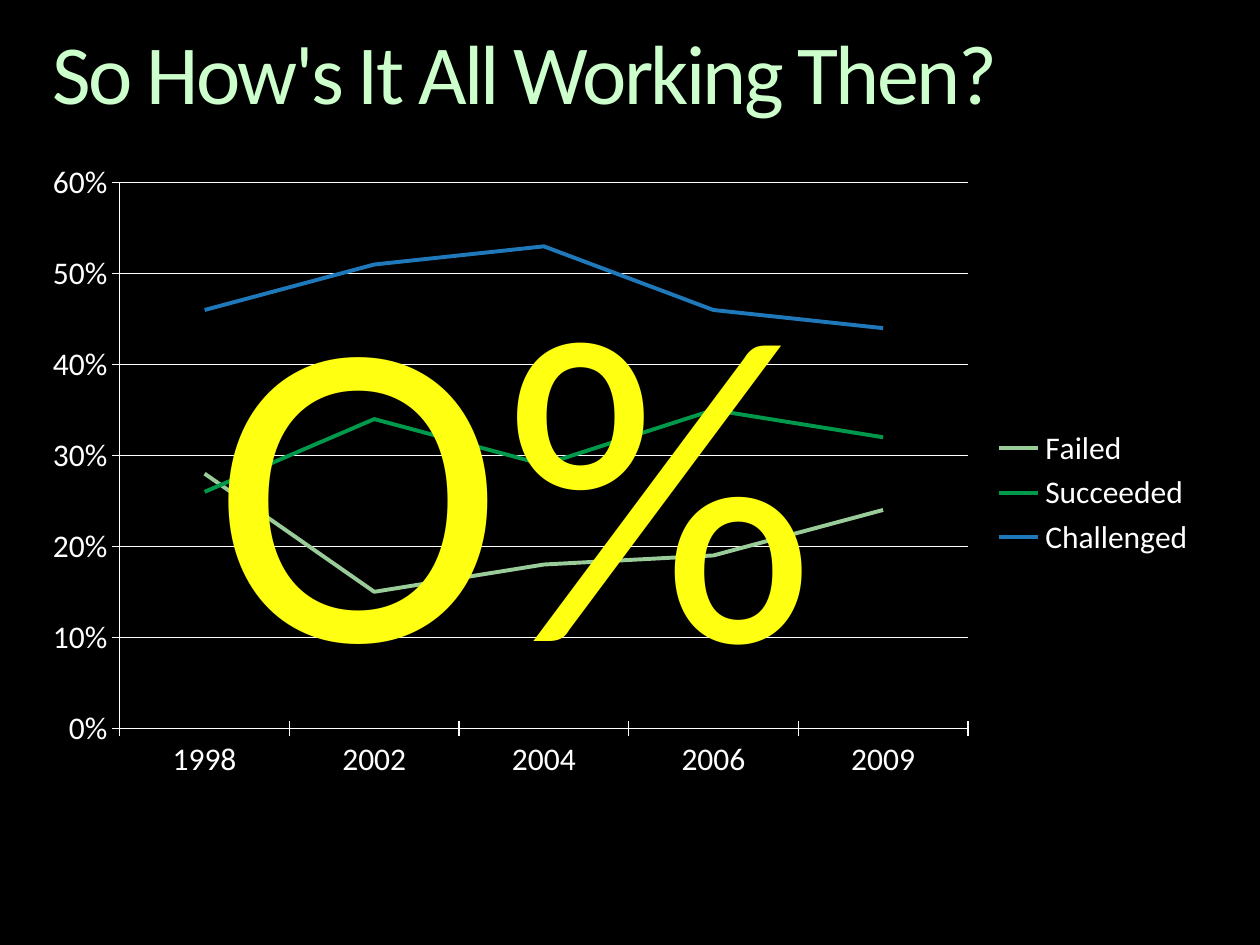
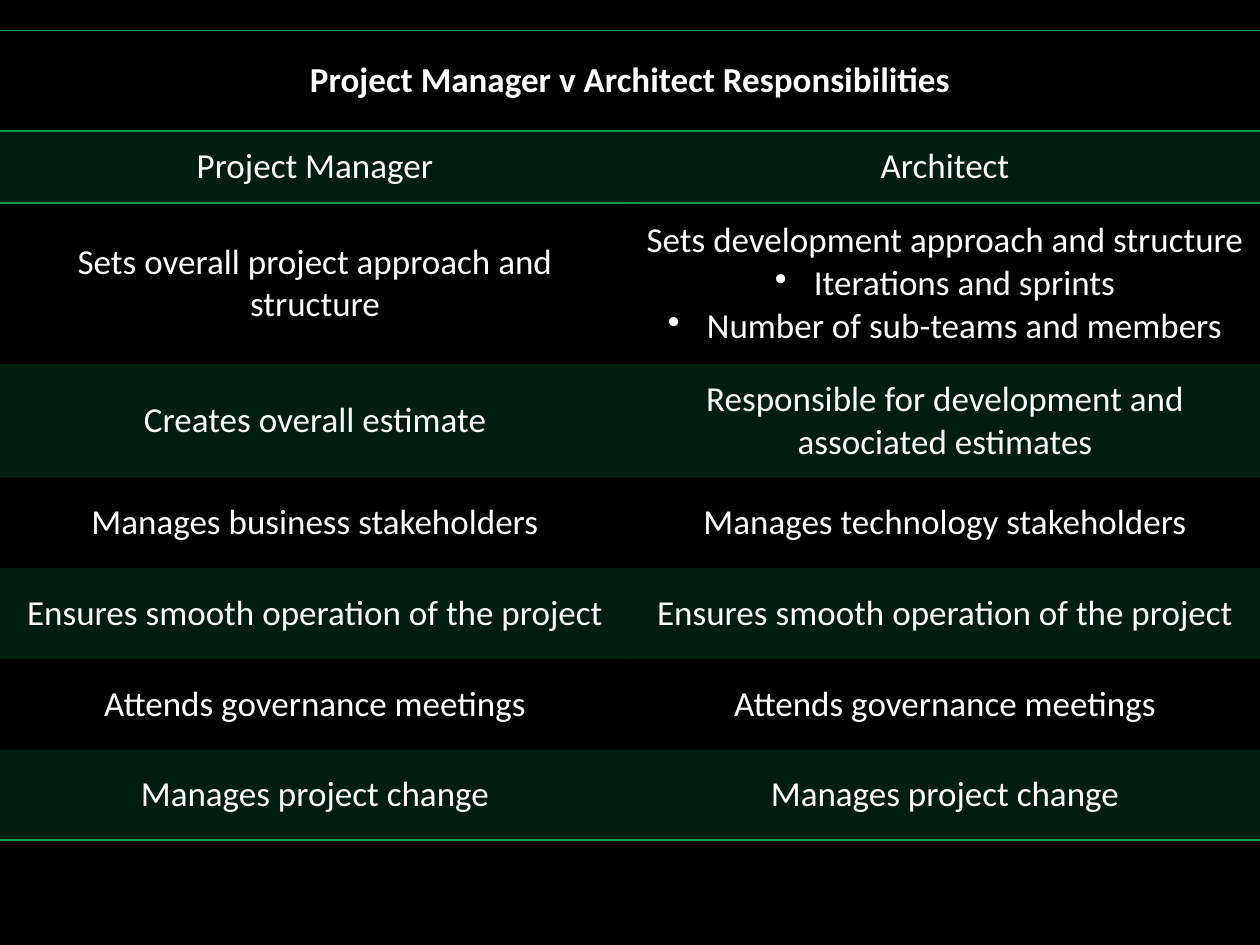
from pptx import Presentation
from pptx.chart.data import CategoryChartData
from pptx.dml.color import RGBColor
from pptx.enum.chart import XL_CHART_TYPE, XL_LEGEND_POSITION, XL_TICK_MARK
from pptx.enum.text import MSO_ANCHOR, PP_ALIGN
from pptx.oxml import parse_xml
from pptx.oxml.ns import nsdecls
from pptx.oxml.xmlchemy import OxmlElement
from pptx.util import Emu, Inches, Pt

LINE, LEGEND_RIGHT = XL_CHART_TYPE.LINE, XL_LEGEND_POSITION.RIGHT
CROSS = XL_TICK_MARK.CROSS
TOP, MIDDLE = MSO_ANCHOR.TOP, MSO_ANCHOR.MIDDLE
LEFT, CENTER = PP_ALIGN.LEFT, PP_ALIGN.CENTER
TITLE_ONLY, BLANK = 5, 6

FONT = "Calibri"
C = {"back": "000000", "title": "CCFFCC", "text": "FFFFFF", "shout": "FFFF11",
     "green": "00994B", "pale": "99CC99", "blue": "1E78B9"}
PLAIN_TABLE = "{2D5ABB26-0587-4C30-8999-92F81FD0307C}"
MARGIN, CONTENT_W = Inches(0.42), Inches(9.17)
BAND_OPACITY = 20

YEARS = ["1998", "2002", "2004", "2006", "2009"]
OUTCOMES = [
    ("Failed", "pale", [0.28, 0.15, 0.18, 0.19, 0.24]),
    ("Succeeded", "green", [0.26, 0.34, 0.29, 0.35, 0.32]),
    ("Challenged", "blue", [0.46, 0.51, 0.53, 0.46, 0.44]),
]
PLOT_AREA = {"x": 0, "y": 0.032, "w": 0.792, "h": 0.875}

HEADING = "Project Manager v Architect Responsibilities"
# Row height in inches, then the lines of each cell; lines after the first are bullets
DUTIES = [
    (0.57, ["Project Manager"], ["Architect"]),
    (1.28, ["Sets overall project approach and structure"],
     ["Sets development approach and structure", "Iterations and sprints",
      "Number of sub-teams and members"]),
    (0.9, ["Creates overall estimate"],
     ["Responsible for development and associated estimates"]),
    (0.72, ["Manages business stakeholders"], ["Manages technology stakeholders"]),
    (0.72, ["Ensures smooth operation of the project"],
     ["Ensures smooth operation of the project"]),
    (0.72, ["Attends governance meetings"], ["Attends governance meetings"]),
    (0.72, ["Manages project change"], ["Manages project change"]),
]


def rgb(name):
    return RGBColor.from_string(C[name])


def set_font(font, size, color, **formats):
    for key, value in {"name": FONT, "size": Pt(size), **formats}.items():
        setattr(font, key, value)
    font.color.rgb = rgb(color)


def set_line(line, color, width):
    line.color.rgb = rgb(color)
    line.width = Pt(width)


def place(sp, left, top, width, height):
    sp.left, sp.top, sp.width, sp.height = left, top, width, height


def add_title(s, text):
    sp = s.shapes.title
    place(sp, MARGIN, Inches(0.25), CONTENT_W, Inches(0.73))
    tf = sp.text_frame
    for side in ("left", "top", "right", "bottom"):
        setattr(tf, f"margin_{side}", 0)
    tf.vertical_anchor = TOP
    p = tf.paragraphs[0]
    p.alignment, p.line_spacing = LEFT, 0.9
    r = p.add_run()
    r.text = text
    set_font(r.font, 48, "title")
    r.font._element.set("spc", "-150")


def add_big_text(s, text, left, top, width, height):
    tf = s.shapes.add_textbox(left, top, width, height).text_frame
    tf.word_wrap = True
    r = tf.paragraphs[0].add_run()
    r.text = text
    set_font(r.font, 250, "shout")


def set_plot_area(chart, area):
    """Fix the plot area, axis labels included, as shares of the chart."""
    plot_area = chart._chartSpace.chart.plotArea
    for old in plot_area.findall("{*}layout"):
        plot_area.remove(old)
    modes = "".join(f'<c:{k}Mode val="edge"/>' for k in "xy")
    sizes = "".join(f'<c:{k} val="{v}"/>' for k, v in area.items())
    plot_area.insert(0, parse_xml(
        f'<c:layout {nsdecls("c")}><c:manualLayout><c:layoutTarget val="outer"/>'
        f"{modes}{sizes}</c:manualLayout></c:layout>"))


def add_line_chart(s, left, top, width, height):
    data = CategoryChartData(number_format="0%")
    data.categories = YEARS
    for name, _, values in OUTCOMES:
        data.add_series(name, values)
    chart = s.shapes.add_chart(LINE, left, top, width, height, data).chart
    chart.has_title = False
    set_font(chart.font, 18, "text")
    chart.has_legend = True
    chart.legend.position = LEGEND_RIGHT
    chart.legend.include_in_layout = False
    for axis in (chart.category_axis, chart.value_axis):
        axis.major_tick_mark = CROSS
        set_line(axis.format.line, "text", 0.75)
    axis = chart.value_axis
    axis.minimum_scale, axis.maximum_scale, axis.major_unit = 0, 0.6, 0.1
    axis.tick_labels.number_format = "0%"
    axis.tick_labels.number_format_is_linked = False
    axis.has_major_gridlines = True
    set_line(axis.major_gridlines.format.line, "text", 0.75)
    plot = chart.plots[0]
    plot.vary_by_categories = False
    for series, (_, color, _) in zip(plot.series, OUTCOMES):
        series.smooth = False
        set_line(series.format.line, color, 2.25)
    set_plot_area(chart, PLOT_AREA)


def add_bullet(p):
    pPr = p._p.get_or_add_pPr()
    pPr.set("marL", str(Inches(0.31)))
    pPr.set("indent", str(-Inches(0.31)))
    bullet = OxmlElement("a:buChar")
    bullet.set("char", "•")
    pPr.append(bullet)


def fill_cell(cell, lines, bold=False):
    cell.vertical_anchor = MIDDLE
    tf = cell.text_frame
    for i, line in enumerate(lines):
        p = tf.add_paragraph() if i else tf.paragraphs[0]
        p.alignment = CENTER
        if i:
            add_bullet(p)
        r = p.add_run()
        r.text = line
        set_font(r.font, 20, "text", bold=bold)


def add_border(cell, edge):
    cell._tc.get_or_add_tcPr().append(parse_xml(
        f'<a:ln{edge} {nsdecls("a")} w="{Pt(1)}"><a:solidFill>'
        f'<a:srgbClr val="{C["green"]}"/></a:solidFill></a:ln{edge}>'))


def shade(cell, banded):
    if not banded:
        cell.fill.background()
        return
    cell.fill.solid()
    cell.fill.fore_color.rgb = rgb("green")
    alpha = OxmlElement("a:alpha")
    alpha.set("val", str(BAND_OPACITY * 1000))
    cell._tc.tcPr.find("{*}solidFill")[0].append(alpha)


def add_duties_table(s, top, width):
    heights = [0.8] + [row[0] for row in DUTIES]
    last = len(DUTIES)
    table = s.shapes.add_table(last + 1, 2, 0, top, width,
                               Inches(sum(heights))).table
    table._tbl.tblPr.find("{*}tableStyleId").text = PLAIN_TABLE
    borders = {0: "TB", 1: "T", last: "B"}
    for i, height in enumerate(heights):
        table.rows[i].height = Inches(height)
        for cell in table.rows[i].cells:
            for edge in borders.get(i, ""):
                add_border(cell, edge)
            shade(cell, banded=i % 2 == 1)
    table.cell(0, 0).merge(table.cell(0, 1))
    fill_cell(table.cell(0, 0), [HEADING], bold=True)
    for i, (_, *cells) in enumerate(DUTIES, 1):
        for j, lines in enumerate(cells):
            fill_cell(table.cell(i, j), lines)


def main():
    prs = Presentation()
    prs.slide_width, prs.slide_height = Inches(10), Inches(7.5)
    fill = prs.slide_master.background.fill
    fill.solid()
    fill.fore_color.rgb = rgb("back")

    s = prs.slides.add_slide(prs.slide_layouts[TITLE_ONLY])
    add_title(s, "So How's It All Working Then?")
    add_line_chart(s, MARGIN, Inches(1.12), CONTENT_W, Inches(5.58))
    add_big_text(s, "O%", Emu(int(prs.slide_width * 0.16)), Inches(1.57),
                 Inches(6.83), Inches(4.31))

    s = prs.slides.add_slide(prs.slide_layouts[BLANK])
    add_duties_table(s, Inches(0.24), prs.slide_width)

    prs.save("out.pptx")


if __name__ == "__main__":
    main()
